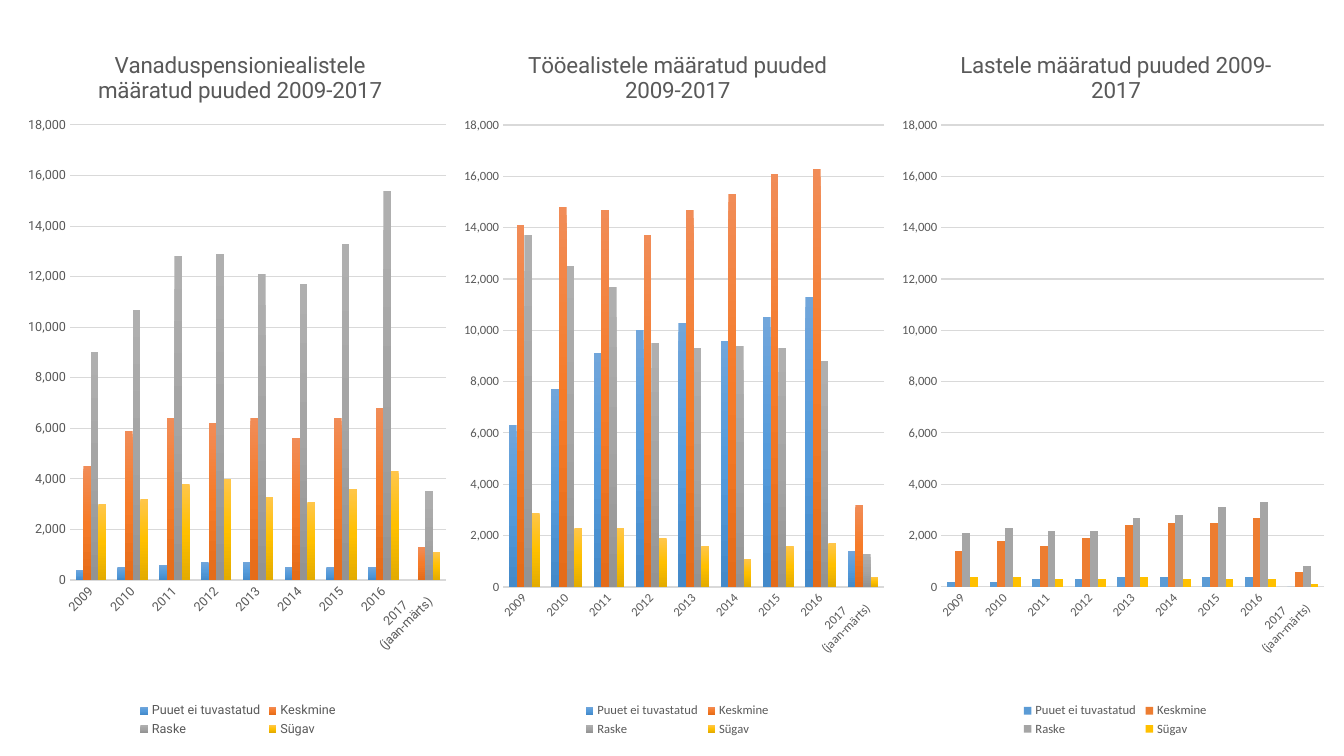
import copy

import lxml.etree
import pptx
import pptx.chart.data
import pptx.dml.color
import pptx.enum.chart
import pptx.oxml.ns
import pptx.util

PX = 914400 / 100.8
COLORS = {"text": "595959", "grid": "D9D9D9", "black": "000000"}
YEARS = [str(year) for year in range(2009, 2017)] + ["2017\n(jaan-märts)"]
DEGREES = ["Puuet ei tuvastatud", "Keskmine", "Raske", "Sügav"]
SOLID = ["5B9BD5", "ED7D31", "A5A5A5", "FFC000"]
SHADED = [
    ["71A6DB", "559BDB", "448ACA"],
    ["F18C57", "F67B28", "E56C19"],
    ["AFAFAF", "A5A5A5", "939393"],
    ["FFC64B", "FFC000", "E3AB00"],
]
PANELS = [
    {
        "title": "Vanaduspensioniealistele määratud puuded 2009-2017",
        "box": (19, 23, 436, 718),
        "plot": (51, 102, 376, 455),
        "legend": (117, 677, 204, 40),
        "title_at": (75, 24),
        "font": "Roboto",
        "fills": SHADED,
        "axis_width": 1,
        "values": [
            [400, 500, 600, 700, 700, 500, 500, 500, 0],
            [4500, 5900, 6400, 6200, 6400, 5600, 6400, 6800, 1300],
            [9000, 10700, 12800, 12900, 12100, 11700, 13300, 15400, 3500],
            [3000, 3200, 3800, 4000, 3300, 3100, 3600, 4300, 1100],
        ],
    },
    {
        "title": "Tööealistele määratud puuded 2009-2017",
        "box": (456, 23, 437, 718),
        "plot": (47, 102, 381, 462),
        "legend": (124, 677, 194, 40),
        "title_at": (68, 24),
        "font": "Calibri",
        "fills": SHADED,
        "axis_width": 1,
        "values": [
            [6300, 7700, 9100, 10000, 10300, 9600, 10500, 11300, 1400],
            [14100, 14800, 14700, 13700, 14700, 15300, 16100, 16300, 3200],
            [13700, 12500, 11700, 9500, 9300, 9400, 9300, 8800, 1300],
            [2900, 2300, 2300, 1900, 1600, 1100, 1600, 1700, 400],
        ],
    },
    {
        "title": "Lastele määratud puuded 2009-2017",
        "box": (893, 23, 441, 718),
        "plot": (48, 102, 383, 462),
        "legend": (125, 677, 194, 40),
        "title_at": (63, 24),
        "font": "Calibri",
        "fills": SOLID,
        "axis_width": 0.75,
        "values": [
            [200, 200, 300, 300, 400, 400, 400, 400, 0],
            [1400, 1800, 1600, 1900, 2400, 2500, 2500, 2700, 600],
            [2100, 2300, 2200, 2200, 2700, 2800, 3100, 3300, 800],
            [400, 400, 300, 300, 400, 300, 300, 300, 100],
        ],
    },
]


def rgb(value):
    return pptx.dml.color.RGBColor.from_string(value)


def set_format(target, values):
    for name, value in values.items():
        setattr(target, name, value)


def set_font(font, name, size, color="text"):
    set_format(font, {"name": name, "size": pptx.util.Pt(size), "bold": False})
    font.color.rgb = rgb(COLORS[color])


def set_line(line, width):
    line.color.rgb = rgb(COLORS["grid"])
    line.width = pptx.util.Pt(width)


def place_part(element, index, box, place, inner=False):
    tag = pptx.oxml.ns.qn
    for old in element.findall(tag("c:layout")):
        element.remove(old)
    layout = lxml.etree.Element(tag("c:layout"))
    manual = lxml.etree.SubElement(layout, tag("c:manualLayout"))
    settings = [("layoutTarget", "inner")] if inner else []
    settings += [("xMode", "edge"), ("yMode", "edge")]
    for name, length, whole in zip("xywh", place, (box[2], box[3]) * 2):
        settings.append((name, str(round(length / whole, 4))))
    for name, value in settings:
        lxml.etree.SubElement(manual, tag("c:" + name)).set("val", value)
    element.insert(index, layout)


def fill_series(series, colors):
    fill = series.format.fill
    if isinstance(colors, str):
        fill.solid()
        fill.fore_color.rgb = rgb(colors)
        return
    fill.gradient()
    fill.gradient_angle = 270
    stop_list = series._element.xpath(".//a:gsLst")[0]
    stop_list.append(copy.deepcopy(stop_list[0]))
    for stop, color, position in zip(fill.gradient_stops, colors, (0, 0.5, 1)):
        stop.color.rgb = rgb(color)
        stop.position = position


def format_axes(chart, font_name, axis_width):
    none = pptx.enum.chart.XL_TICK_MARK.NONE
    for axis in (chart.category_axis, chart.value_axis):
        set_format(axis, {"major_tick_mark": none, "minor_tick_mark": none})
        set_font(axis.tick_labels.font, font_name, 9)
    categories, values = chart.category_axis, chart.value_axis
    set_line(categories.format.line, axis_width)
    categories._element.xpath("./c:txPr/a:bodyPr")[0].set("rot", "-2700000")
    set_format(values, {"minimum_scale": 0, "maximum_scale": 18000, "major_unit": 2000})
    set_format(values.tick_labels, {"number_format": "#,##0", "number_format_is_linked": False})
    values.format.line.fill.background()
    set_line(values.major_gridlines.format.line, 0.75)


def add_panel(page, panel):
    box = panel["box"]
    data = pptx.chart.data.CategoryChartData(number_format="#,##0")
    data.categories = YEARS
    for name, values in zip(DEGREES, panel["values"]):
        data.add_series(name, values)
    chart = page.shapes.add_chart(
        pptx.enum.chart.XL_CHART_TYPE.COLUMN_CLUSTERED,
        *(round(length * PX) for length in box),
        data,
    ).chart
    set_font(chart.font, "Calibri", 10, "black")
    set_format(chart.plots[0], {"gap_width": 150, "overlap": 0, "vary_by_categories": False})
    for series, colors in zip(chart.plots[0].series, panel["fills"]):
        fill_series(series, colors)
    format_axes(chart, panel["font"], panel["axis_width"])

    frame = chart.chart_title.text_frame
    frame.text = panel["title"]
    set_font(frame.paragraphs[0].runs[0].font, "Roboto", 16)
    chart.has_legend = True
    bottom = pptx.enum.chart.XL_LEGEND_POSITION.BOTTOM
    set_format(chart.legend, {"position": bottom, "include_in_layout": False})
    set_font(chart.legend.font, panel["font"], 9)

    place_part(chart._chartSpace.xpath(".//c:plotArea")[0], 0, box, panel["plot"], True)
    place_part(chart.legend._element, 1, box, panel["legend"])
    place_part(chart.chart_title._element, 1, box, panel["title_at"])


def main():
    deck = pptx.Presentation()
    deck.slide_width = pptx.util.Inches(13.33)
    deck.slide_height = pptx.util.Inches(7.5)
    page = deck.slides.add_slide(deck.slide_layouts[6])
    for panel in PANELS:
        add_panel(page, panel)
    deck.save("out.pptx")


if __name__ == "__main__":
    main()
